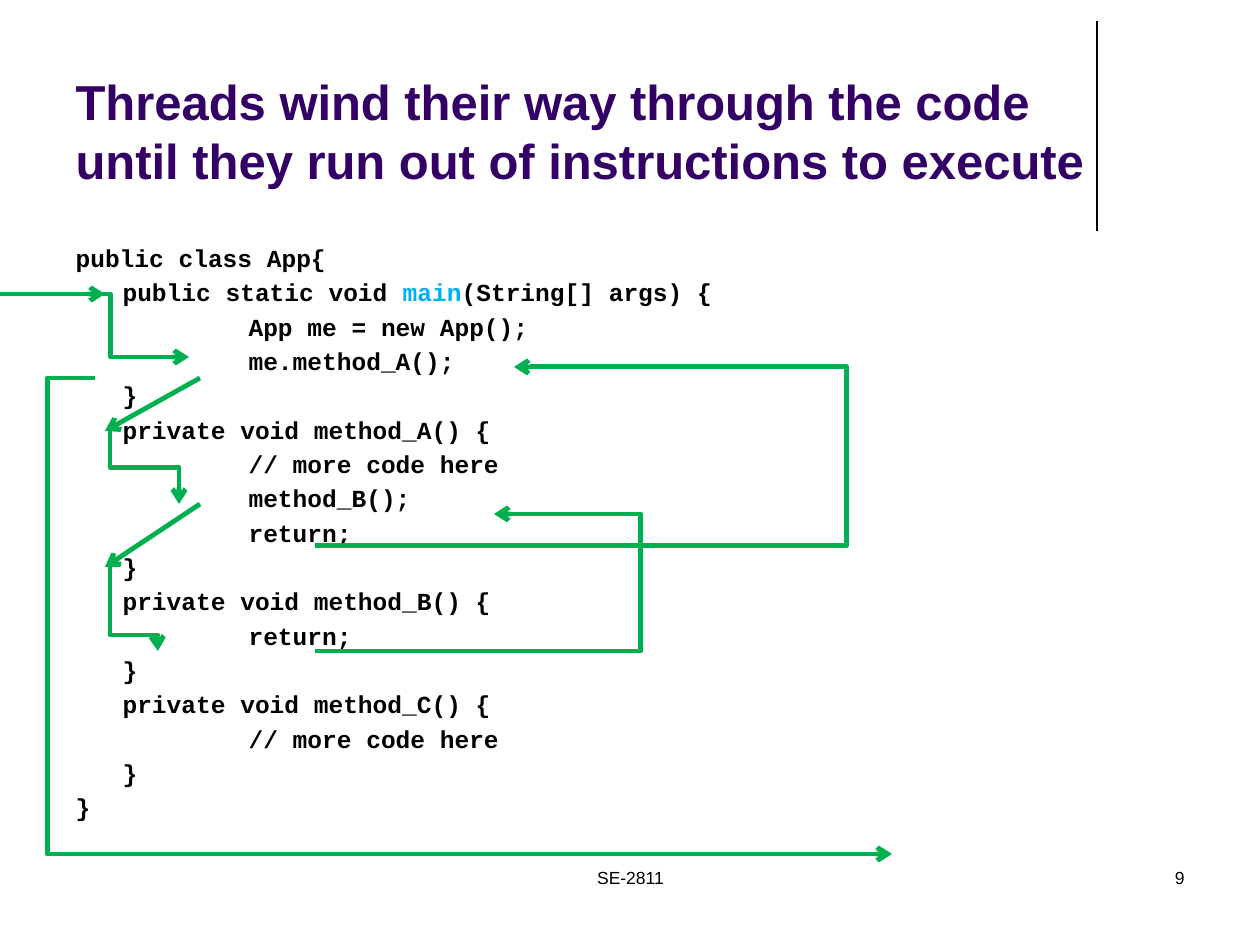
from lxml.etree import SubElement
from pptx import Presentation
from pptx.dml.color import RGBColor
from pptx.enum.shapes import MSO_CONNECTOR
from pptx.enum.text import MSO_ANCHOR, MSO_AUTO_SIZE, PP_ALIGN
from pptx.oxml.ns import qn
from pptx.util import Pt

STRAIGHT, ELBOW = MSO_CONNECTOR.STRAIGHT, MSO_CONNECTOR.ELBOW
LEFT, CENTER, RIGHT = PP_ALIGN.LEFT, PP_ALIGN.CENTER, PP_ALIGN.RIGHT
BOTTOM, TOP = MSO_ANCHOR.BOTTOM, MSO_ANCHOR.TOP
NO_FIT = MSO_AUTO_SIZE.NONE
BLACK = RGBColor(0x00, 0x00, 0x00)
PURPLE = RGBColor(0x33, 0x00, 0x66)
GREEN = RGBColor(0x00, 0xB0, 0x50)
BLUE = RGBColor(0x00, 0xB0, 0xF0)
SCALE = 914400 / 126


def px(n):
    return round(n * SCALE)


def link(kind, ends, color, width):
    line = slide.shapes.add_connector(kind, *[px(n) for n in ends])
    line.line.color.rgb = color
    line.line.width = Pt(width)
    SubElement(line._element.spPr, qn("a:effectLst"))
    return line


prs = Presentation()
prs.slide_width, prs.slide_height = px(1260), px(945)
slide = prs.slides.add_slide(prs.slide_layouts[1])

link(STRAIGHT, (1097, 21, 1097, 231), BLACK, 0.75)

title, body = slide.placeholders
title.left, title.top, title.width, title.height = px(63), px(17), px(1040), px(179)
frame = title.text_frame
frame.text = "Threads wind their way through the code until they run out of instructions to execute"
frame.auto_size = NO_FIT
frame.vertical_anchor = BOTTOM
par = frame.paragraphs[0]
par.alignment = LEFT
font = par.runs[0].font
font.name, font.size, font.bold = "Arial", Pt(28), True
font.color.rgb = PURPLE

CODE = [
    (0, "public class App{"),
    (1, "public static void main(String[] args) {"),
    (2, "App me = new App();"),
    (2, "me.method_A();"),
    (1, "}"),
    (1, "private void method_A() {"),
    (2, "// more code here"),
    (2, "method_B();"),
    (2, "return;"),
    (1, "}"),
    (1, "private void method_B() {"),
    (2, "return;"),
    (1, "}"),
    (1, "private void method_C() {"),
    (2, "// more code here"),
    (1, "}"),
    (0, "}"),
]
body.left, body.top, body.width, body.height = px(63), px(236), px(693), px(572)
frame = body.text_frame
frame.auto_size = NO_FIT
frame.vertical_anchor = TOP
frame.margin_top = px(7)
for i, (depth, code) in enumerate(CODE):
    par = frame.add_paragraph() if i else frame.paragraphs[0]
    par.space_before = Pt(2.8 if i else 0)
    props = par._p.get_or_add_pPr()
    props.set("marL", str(px(47)))
    props.set("indent", str(-px(47)))
    props.set("defTabSz", str(px(126)))
    SubElement(props, qn("a:buNone"))
    for part in ("\t" * depth + code).partition("main"):
        if part:
            run = par.add_run()
            run.text = part
            font = run.font
            font.name, font.size, font.bold = "Courier New", Pt(14), True
            font.color.rgb = BLUE if part == "main" else BLACK

for left, width, text, align in [(431, 399, "SE-2811", CENTER), (903, 294, "9", RIGHT)]:
    box = slide.shapes.add_textbox(px(left), px(861), px(width), px(63))
    box.text_frame.word_wrap = True
    box.text_frame.text = text
    par = box.text_frame.paragraphs[0]
    par.alignment = align
    font = par.runs[0].font
    font.name, font.size = "Arial", Pt(10)
    font.color.rgb = BLACK

ARROWS = [
    (0, 294, 105, 294, None, False),
    (32, 294, 189, 357, 0.5, False),
    (200, 378, 105, 431, None, False),
    (110, 431, 179, 504, 0.5, True),
    (200, 504, 105, 567, None, False),
    (110, 567, 158, 651, 0.81, True),
    (315, 651, 494, 514, 1.82, False),
    (315, 546, 514, 367, 2.67, False),
    (95, 378, 892, 854, -0.06, False),
]
for x1, y1, x2, y2, bend, turned in ARROWS:
    ends = x1, y1, x2, y2
    if turned:
        mid_x, mid_y = (x1 + x2) / 2, (y1 + y2) / 2
        dx, dy = (x2 - x1) / 2, (y2 - y1) / 2
        ends = mid_x + dy, mid_y - dx, mid_x - dy, mid_y + dx
    arrow = link(STRAIGHT if bend is None else ELBOW, ends, GREEN, 2.75)
    props = arrow._element.spPr
    SubElement(props.find(qn("a:ln")), qn("a:tailEnd"), type="arrow")
    if turned:
        props.find(qn("a:xfrm")).set("rot", "16200000")
    if bend is not None:
        guides = props.find(qn("a:prstGeom")).find(qn("a:avLst"))
        SubElement(guides, qn("a:gd"), name="adj1", fmla=f"val {round(bend * 100000)}")

prs.save("out.pptx")
